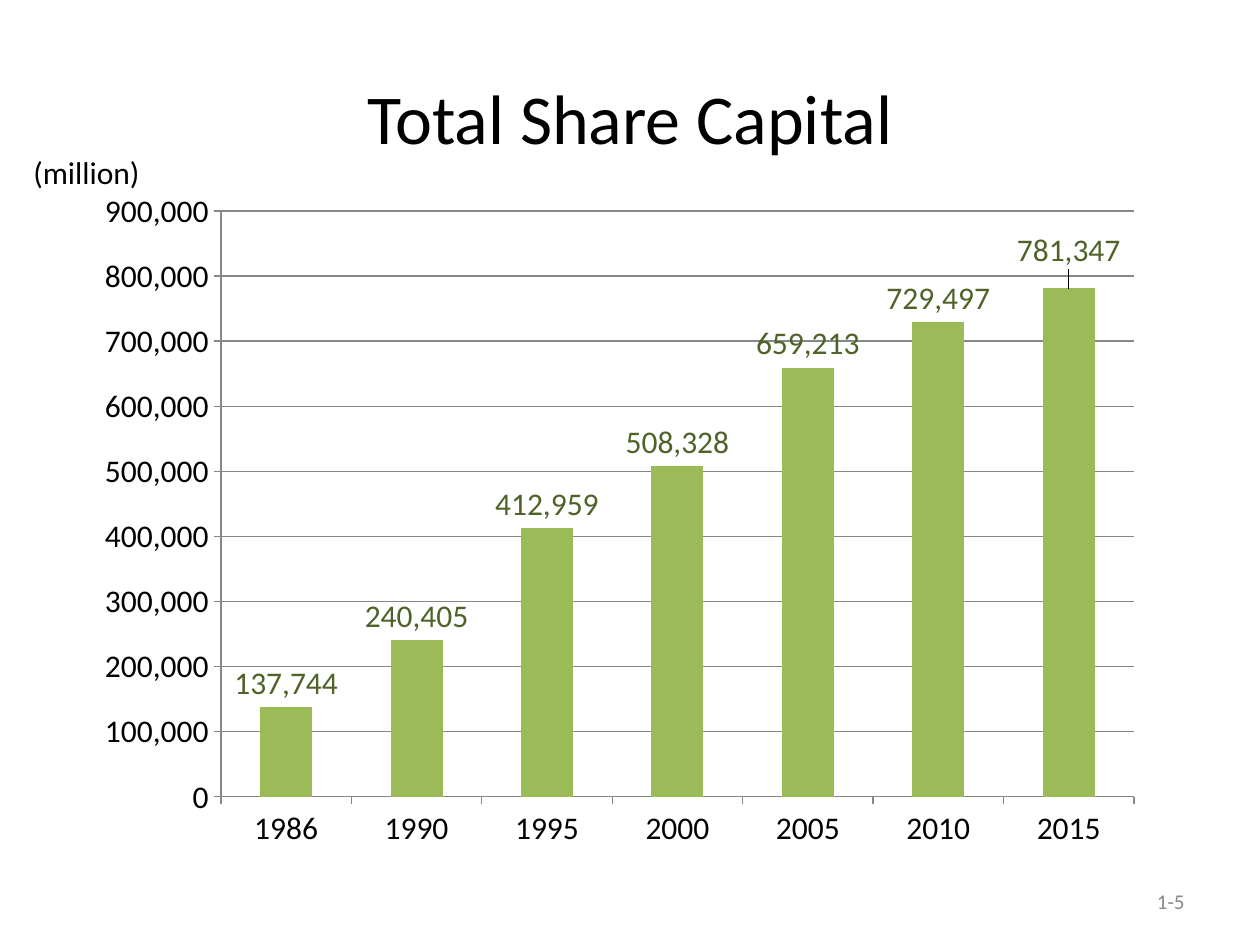
from dataclasses import dataclass

from lxml import etree
from pptx import Presentation
from pptx import util as u
from pptx.chart.data import CategoryChartData
from pptx.dml.color import RGBColor
from pptx.enum import chart as ch
from pptx.enum import text
from pptx.oxml import ns

PX = u.Inches(1) // 126


@dataclass
class Theme:
    font: str = "Calibri"
    black: str = "000000"
    grey: str = "898989"
    line: str = "878787"
    bar: str = "9BBB59"
    label: str = "4F6228"
    title_size: int = 40
    body_size: int = 18
    number_size: int = 12


def style(font, size, color):
    font.name = theme.font
    font.size = u.Pt(size)
    font.color.rgb = RGBColor.from_string(color)


def manual_layout(parent, index, **values):
    layout = etree.Element(ns.qn("c:layout"))
    manual = etree.SubElement(layout, ns.qn("c:manualLayout"))
    for name, value in values.items():
        etree.SubElement(manual, ns.qn("c:" + name), val=str(value))
    for old in parent.findall(ns.qn("c:layout")):
        parent.remove(old)
    parent.insert(index, layout)


theme = Theme()
prs = Presentation()
prs.slide_width, prs.slide_height = 1260 * PX, 945 * PX
s = prs.slides.add_slide(prs.slide_layouts[5])

title = s.shapes.title
title.left, title.top, title.width, title.height = [v * PX for v in (63, 38, 1134, 158)]
title.text_frame.text = "Total Share Capital"
title.text_frame.vertical_anchor = text.MSO_ANCHOR.MIDDLE
p = title.text_frame.paragraphs[0]
p.alignment = text.PP_ALIGN.CENTER
style(p.runs[0].font, theme.title_size, theme.black)

data = CategoryChartData(number_format="#,##0")
data.categories = ["1986", "1990", "1995", "2000", "2005", "2010", "2015"]
data.add_series("Series 1", (137744, 240405, 412959, 508328, 659213, 729497, 781347))
left, top, width, height = 84, 179, 1071, 683
chart = s.shapes.add_chart(
    ch.XL_CHART_TYPE.COLUMN_CLUSTERED, left * PX, top * PX, width * PX, height * PX, data
).chart
chart.has_title = False
chart.has_legend = False
style(chart.font, theme.body_size, theme.black)
manual_layout(
    chart.plots[0]._element.getparent(), 0,
    layoutTarget="inner", xMode="edge", yMode="edge",
    x=(221 - left) / width, y=(211 - top) / height, w=913 / width, h=586 / height,
)

values = chart.value_axis
values.minimum_scale, values.maximum_scale, values.major_unit = 0, 900000, 100000
values.has_major_gridlines = True
values.tick_labels.number_format = r"#,##0;[Red]\-#,##0"
values.tick_labels.number_format_is_linked = False
for part in (values, values.major_gridlines, chart.category_axis):
    part.format.line.color.rgb = RGBColor.from_string(theme.line)
    part.format.line.width = u.Pt(0.75)

plot = chart.plots[0]
plot.gap_width = 150
plot.vary_by_categories = False
series = plot.series[0]
series.format.fill.solid()
series.format.fill.fore_color.rgb = RGBColor.from_string(theme.bar)
labels = series.data_labels
labels.show_value = True
labels.number_format = "#,##0"
labels.number_format_is_linked = False
last = series.points[6].data_label
for label in (labels, last):
    label.position = ch.XL_LABEL_POSITION.OUTSIDE_END
    style(label.font, theme.body_size, theme.label)
manual_layout(labels._element.find(ns.qn("c:dLbl")), 1, x=0, y=-14 / height)

for words, box, size, color, align, anchor in (
    ("1-5", (903, 876, 294, 50), theme.number_size, theme.grey,
     text.PP_ALIGN.RIGHT, text.MSO_ANCHOR.MIDDLE),
    ("(million)", (21, 147, 136, 50), theme.body_size, theme.black,
     text.PP_ALIGN.LEFT, text.MSO_ANCHOR.TOP),
):
    sp = s.shapes.add_textbox(*[v * PX for v in box])
    tf = sp.text_frame
    tf.word_wrap = True
    tf.vertical_anchor = anchor
    tf.text = words
    p = tf.paragraphs[0]
    p.alignment = align
    style(p.runs[0].font, size, color)

prs.save("out.pptx")
